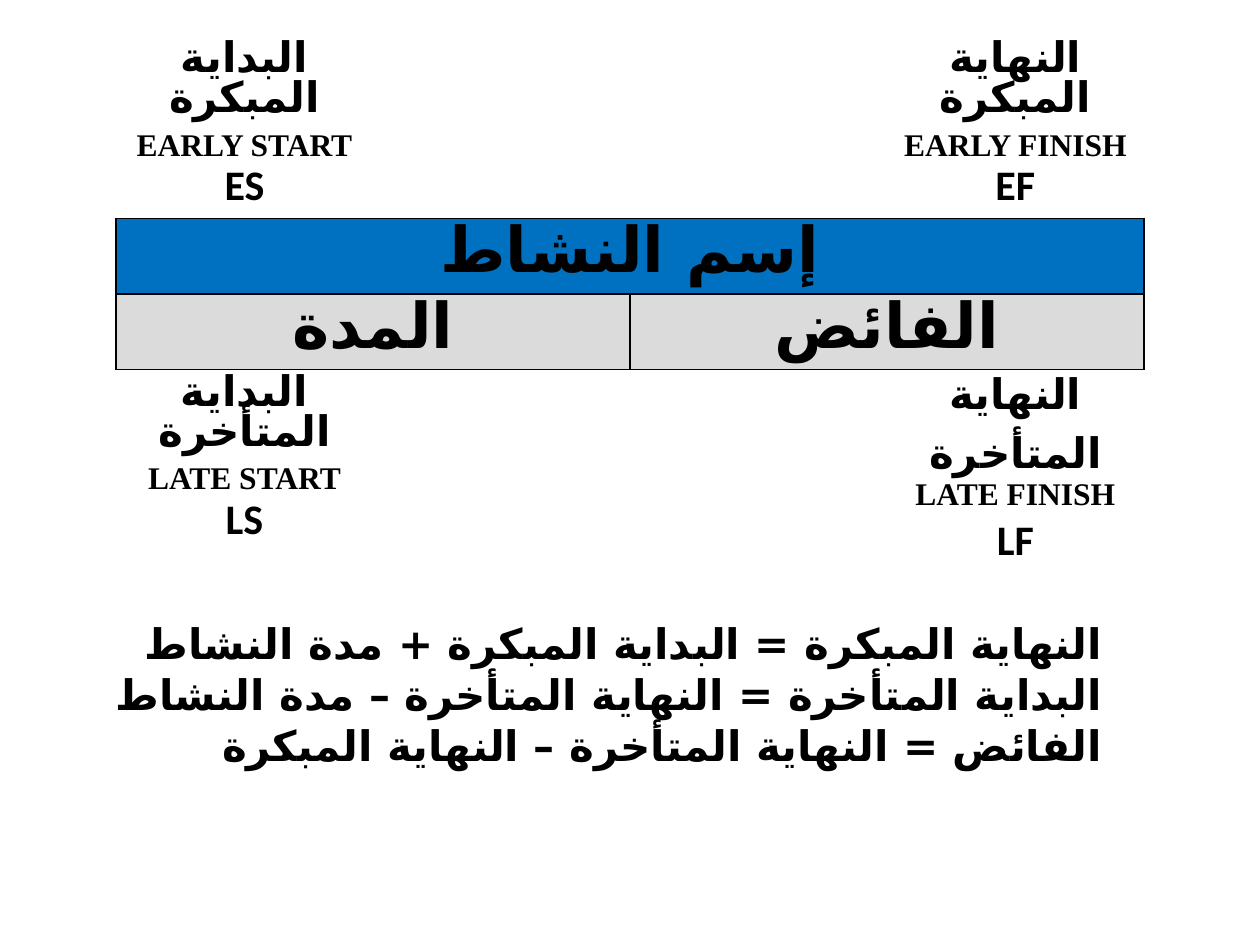
from lxml.etree import SubElement
from pptx import Presentation
from pptx.dml.color import RGBColor
from pptx.enum.text import MSO_AUTO_SIZE, PP_ALIGN
from pptx.oxml.ns import qn
from pptx.util import Emu, Pt

PX = 914400 // 126
COLORS = {"ink": "000000", "name": "0070C0", "detail": "DBDBDB"}
SANS, SERIF, ARABIC = "Calibri", "Times New Roman", "DejaVu Sans"
OPERATORS = "=+–"
NO_STYLE = "{2D5ABB26-0587-4C30-8999-92F81FD0307C}"


def px(n):
    return Emu(n * PX)


def rgb(key):
    return RGBColor.from_string(COLORS[key])


def add_paragraph(tf, runs, align, spacing, rtl=True, first=False):
    p = tf.paragraphs[0] if first else tf.add_paragraph()
    p.alignment = align
    p.line_spacing = spacing
    if rtl:
        p._p.get_or_add_pPr().set("rtl", "1")
    for text, size, font in runs:
        r = p.add_run()
        r.text = text
        r.font.size = Pt(size)
        r.font.name = font
        r.font.bold = True
        r.font.color.rgb = rgb("ink")
        if text not in OPERATORS or text == " ":
            SubElement(r._r.get_or_add_rPr(), qn("a:cs"), typeface=ARABIC)
    return p


def add_borders(cell, sides):
    tcPr = cell._tc.get_or_add_tcPr()
    for side in sides:
        ln = SubElement(tcPr, qn(f"a:ln{side}"), w=str(Pt(1)))
        fill = SubElement(ln, qn("a:solidFill"))
        SubElement(fill, qn("a:srgbClr"), val=COLORS["ink"])


def activity_table(s, x, y, w, h):
    gf = s.shapes.add_table(4, 4, px(x), px(y), px(w), px(h))
    table = gf.table
    table.first_row = False
    table.horz_banding = False
    table._tbl.tblPr.find(qn("a:tableStyleId")).text = NO_STYLE
    for row in table.rows:
        row.height = px(51)
    gf.height = px(h)

    row_styles = [("B", None), ("LRTB", "name"), ("LRTB", "detail"), ("T", None)]
    for r, (sides, color) in enumerate(row_styles):
        for c in range(4):
            cell = table.cell(r, c)
            add_borders(cell, sides)
            if color:
                cell.fill.solid()
                cell.fill.fore_color.rgb = rgb(color)
            else:
                cell.fill.background()

    for r, c, span, text in [
        (1, 0, 4, "إسم النشاط"),
        (2, 0, 2, "المدة"),
        (2, 2, 2, "الفائض"),
    ]:
        cell = table.cell(r, c)
        cell.merge(table.cell(r, c + span - 1))
        add_paragraph(cell.text_frame, [(text, 36, SANS)], PP_ALIGN.CENTER, Pt(36), False, True)

    for r, c, arabic, gap, english, code, spacing, before in [
        (0, 0, "البداية المبكرة", 24, "EARLY START", "ES", Pt(23), 0),
        (0, 3, "النهاية المبكرة", 24, "EARLY FINISH", "EF", Pt(23), 0),
        (3, 0, "البداية المتأخرة", 24, "LATE START", "LS", Pt(23), 0),
        (3, 3, "النهاية المتأخرة", 36, "LATE FINISH", "LF", 0.86, 4),
    ]:
        tf = table.cell(r, c).text_frame
        rtl = (r, c) != (0, 0)
        label = [(arabic, 24, SANS), (" ", gap, SANS), (english, 18, SERIF)]
        add_paragraph(tf, label, PP_ALIGN.CENTER, spacing, rtl, True)
        p = add_paragraph(tf, [(code, 24, SANS)], PP_ALIGN.CENTER, Pt(28), rtl)
        p.space_before = Pt(before)


def formulas(s, x, y, w, h):
    tf = s.shapes.add_textbox(px(x), px(y), px(w), px(h)).text_frame
    tf.word_wrap = True
    tf.auto_size = MSO_AUTO_SIZE.SHAPE_TO_FIT_TEXT
    for i, (result, base, operator, change) in enumerate([
        ("النهاية المبكرة ", " البداية المبكرة ", "+", " مدة النشاط"),
        ("البداية المتأخرة ", " النهاية المتأخرة ", "–", " مدة النشاط"),
        ("الفائض ", " النهاية المتأخرة ", "–", " النهاية المبكرة "),
    ]):
        runs = [(text, 24, SERIF) for text in (result, "=", base, operator, change)]
        add_paragraph(tf, runs, PP_ALIGN.RIGHT, Pt(29), first=i == 0)


def main():
    prs = Presentation()
    prs.slide_width, prs.slide_height = px(1260), px(945)
    s = prs.slides.add_slide(prs.slide_layouts[6])
    activity_table(s, 116, 36, 1028, 479)
    formulas(s, 94, 611, 1021, 165)
    prs.save("out.pptx")


if __name__ == "__main__":
    main()
